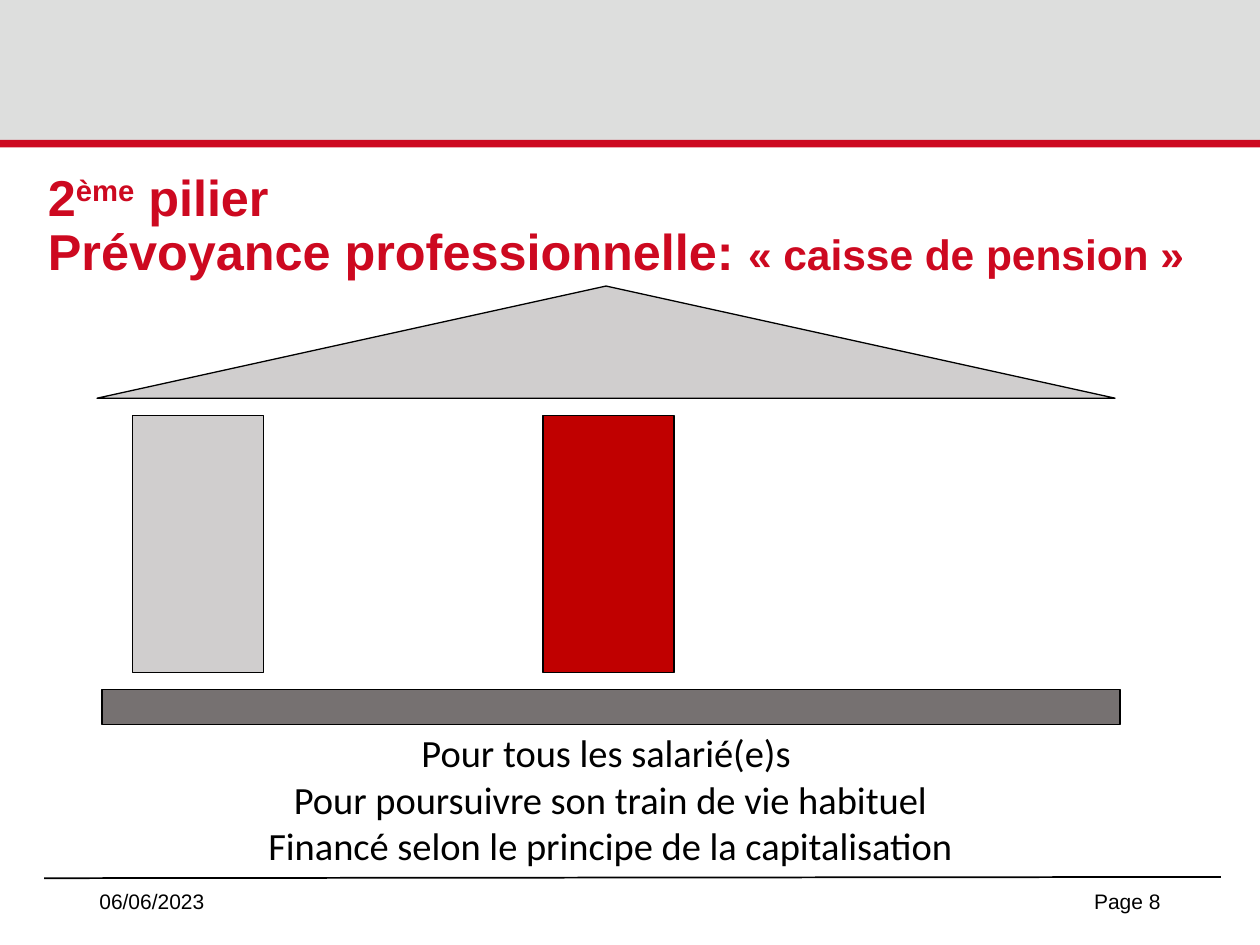
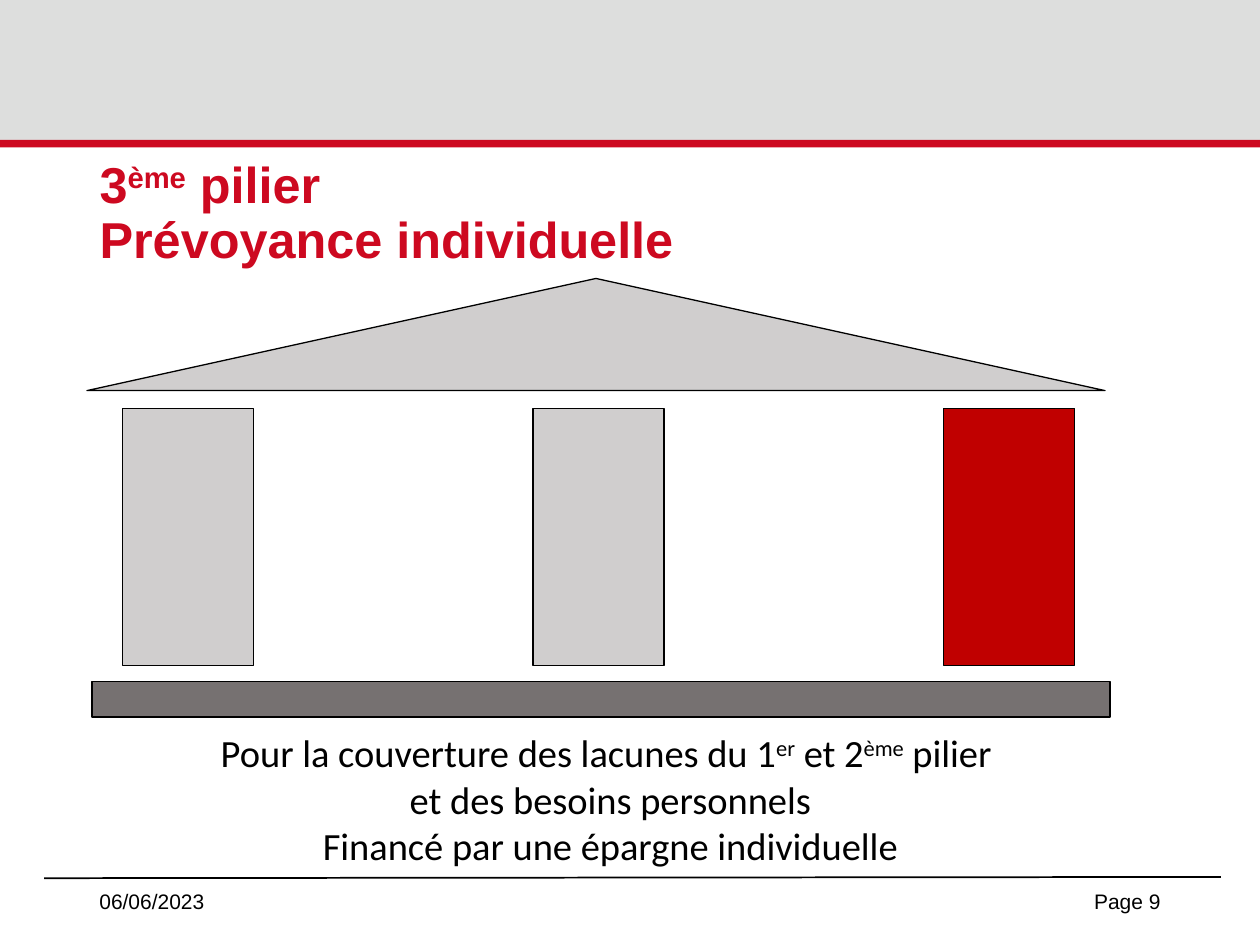
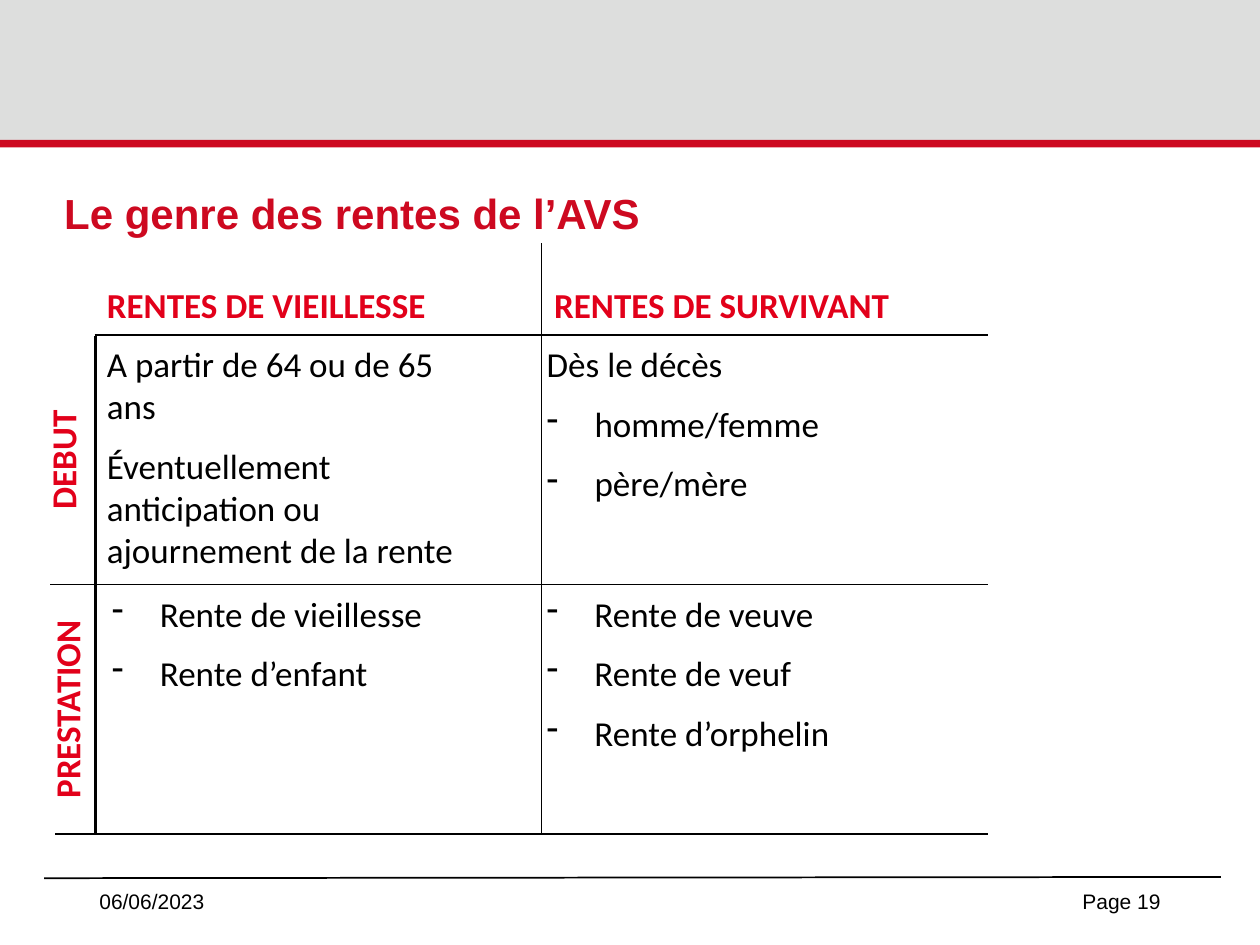
from lxml.etree import SubElement
from pptx import Presentation
from pptx.dml.color import RGBColor
from pptx.enum.shapes import MSO_CONNECTOR, MSO_SHAPE
from pptx.enum.text import MSO_ANCHOR, MSO_AUTO_SIZE, PP_ALIGN
from pptx.oxml.ns import qn
from pptx.util import Inches, Pt

BLACK, RED, BAND, ACCENT = "000000", "CD0920", "DDDEDD", "E2001A"
STONE, BASE, ACTIVE = "D0CECE", "767171", "C00000"
LEFT, MID, RIGHT = PP_ALIGN.LEFT, PP_ALIGN.CENTER, PP_ALIGN.RIGHT


def color(code):
    """Turn a hex string into a colour."""
    return RGBColor.from_string(code)


def raised(text):
    """Mark a piece of text as superscript."""
    return text, {"baseline": "30000"}


class Deck:
    """Hold the shared style and the current slide."""

    def __init__(self):
        """Open an empty presentation of the right size."""
        self.file = Presentation()
        self.file.slide_width = Inches(10)
        self.file.slide_height = Inches(7.5)

    def start(self, page, box, *parts, size=28.8):
        """Add a slide with bands, title and footer."""
        self.slide = self.file.slides.add_slide(self.file.slide_layouts[5])
        self.shape(MSO_SHAPE.RECTANGLE, (0, 0, 10, 1.11), BAND)
        self.shape(MSO_SHAPE.RECTANGLE, (0, 1.11, 10, 0.06), RED)
        self.line((0.35, 6.97), (9.69, 6.96), 1)
        self.title(box, parts, size)
        for left, text, align in ((0.69, "06/06/2023", LEFT), (7.06, f"Page {page}", RIGHT)):
            foot = self.text((left, 6.95, 2.25, 0.4), [[text]], 12, "Arial", align=align)
            foot.text_frame.vertical_anchor = MSO_ANCHOR.MIDDLE

    def title(self, box, parts, size):
        """Place and format the title placeholder."""
        head = self.slide.shapes.title
        head.left, head.top, head.width, head.height = map(Inches, box)
        frame = head.text_frame
        frame.auto_size = MSO_AUTO_SIZE.NONE
        frame.vertical_anchor = MSO_ANCHOR.MIDDLE
        para = frame.paragraphs[0]
        para.line_spacing = 0.9
        self.fill(para, parts, size, "Arial", RED, True, LEFT)

    def fill(self, para, parts, size, face, code, bold, align):
        """Write the parts of a paragraph and set its font."""
        para.alignment = align
        font = para.font
        font.size, font.name, font.bold = Pt(size), face, bold
        font.color.rgb = color(code)
        for part in parts:
            text, marks = (part, {}) if isinstance(part, str) else part
            for row, words in enumerate(text.split("\n")):
                if row:
                    para.add_line_break()
                run = para.add_run()
                run.text = words
                for key, value in marks.items():
                    run._r.get_or_add_rPr().set(key, value)

    def text(self, box, paras, size=20, face="Calibri", code=BLACK, bold=False,
             align=LEFT, plain=None, turn=0):
        """Add a text box; paragraphs from index plain on get a dash."""
        item = self.slide.shapes.add_textbox(*map(Inches, box))
        item.rotation = turn
        frame = item.text_frame
        frame.word_wrap = True
        for index, parts in enumerate(paras):
            para = frame.add_paragraph() if index else frame.paragraphs[0]
            if plain is not None and index >= plain:
                self.dash(para)
            if index:
                para.space_before = Pt(size / 2)
            self.fill(para, parts, size, face, code, bold, align)
        return item

    def dash(self, para):
        """Give a paragraph a hanging dash."""
        props = para._p.get_or_add_pPr()
        props.set("marL", str(Inches(0.38)))
        props.set("indent", str(-Inches(0.38)))
        SubElement(props, qn("a:buChar")).set("char", "-")

    def shape(self, kind, box, code, edge=0):
        """Add a filled shape, outlined if edge is given."""
        item = self.slide.shapes.add_shape(kind, *map(Inches, box))
        item.shadow.inherit = False
        item.fill.solid()
        item.fill.fore_color.rgb = color(code)
        if edge:
            item.line.color.rgb = color(BLACK)
            item.line.width = Pt(edge)
        else:
            item.line.fill.background()

    def line(self, start, end, width=0.75):
        """Add a straight black line."""
        item = self.slide.shapes.add_connector(
            MSO_CONNECTOR.STRAIGHT, *map(Inches, (*start, *end)))
        item.line.color.rgb = color(BLACK)
        item.line.width = Pt(width)
        SubElement(item._element.spPr, qn("a:effectLst"))

    def temple(self, left, top, codes):
        """Draw a roof, a base and one pillar per colour."""
        self.shape(MSO_SHAPE.ISOSCELES_TRIANGLE, (left, top, 8.08, 0.89), STONE, 0.75)
        self.shape(MSO_SHAPE.RECTANGLE, (left + 0.04, top + 3.2, 8.08, 0.28), BASE, 0.75)
        for index, code in enumerate(codes):
            box = (left + 0.28 + 3.26 * index, top + 1.03, 1.04, 2.04)
            self.shape(MSO_SHAPE.RECTANGLE, box, code, 0.75)

    def note(self, *parts):
        """Write the centred lines below the temple."""
        self.text((0.97, 5.74, 7.75, 1.21), [parts], 22, align=MID)

    def label(self, box, text, align=LEFT, turn=0):
        """Write a bold red heading of the grid."""
        self.text(box, [[text]], code=ACCENT, bold=True, align=align, turn=turn)


def main():
    """Build the three slides."""
    deck = Deck()

    deck.start(8, (0.28, 1.41, 9.58, 0.79), "2", raised("ème"),
               " pilier \nPrévoyance professionnelle: ",
               ("«\u00a0caisse de pension\u00a0»", {"sz": "2430"}))
    deck.temple(0.77, 2.27, (STONE, ACTIVE))
    deck.note("Pour tous les salarié(e)s \nPour poursuivre son train de vie habituel\n"
              "Financé selon le principe de la capitalisation")

    deck.start(9, (0.69, 1.31, 8.62, 0.79), "3", raised("ème"),
               " pilier \nPrévoyance individuelle")
    deck.temple(0.69, 2.21, (STONE, STONE, ACTIVE))
    deck.note("Pour la couverture des lacunes du 1", raised("er"), " et 2", raised("ème"),
              " pilier \net des besoins personnels\nFinancé par une épargne individuelle")

    deck.start(19, (0.41, 1.31, 9.46, 0.8), "Le genre des rentes de l’AVS", size=24)
    deck.line((0.76, 2.67), (0.76, 6.63), 1.5)
    deck.line((0.75, 2.66), (7.84, 2.66), 1.5)
    deck.line((4.3, 1.93), (4.3, 6.63))
    for left, top in ((0.4, 4.64), (0.44, 6.62)):
        deck.line((left, top), (7.84, top))
    deck.label((0.75, 2.2, 2.79, 0.43), "RENTES DE VIEILLESSE")
    deck.label((4.3, 2.2, 3.88, 0.44), "RENTES DE SURVIVANT")
    deck.label((-0.49, 3.43, 1.98, 0.44), "DEBUT", MID, 270)
    deck.label((-0.46, 5.41, 1.98, 0.44), "PRESTATION", MID, 270)
    deck.text((0.75, 2.67, 2.97, 1.95), [
        ["A partir de 64 ou de 65 ans"],
        ["Éventuellement anticipation ou ajournement de la rente"]])
    deck.text((4.24, 2.67, 3.11, 1.45),
              [["Dès le décès"], ["homme/femme"], ["père/mère"]], plain=1)
    deck.text((0.79, 4.65, 3.08, 0.94),
              [["Rente de vieillesse"], ["Rente d’enfant"]], plain=0)
    deck.text((4.24, 4.65, 4.13, 1.45),
              [["Rente de veuve"], ["Rente de veuf"], ["Rente d’orphelin"]], plain=0)

    deck.file.save("out.pptx")


if __name__ == "__main__":
    main()
